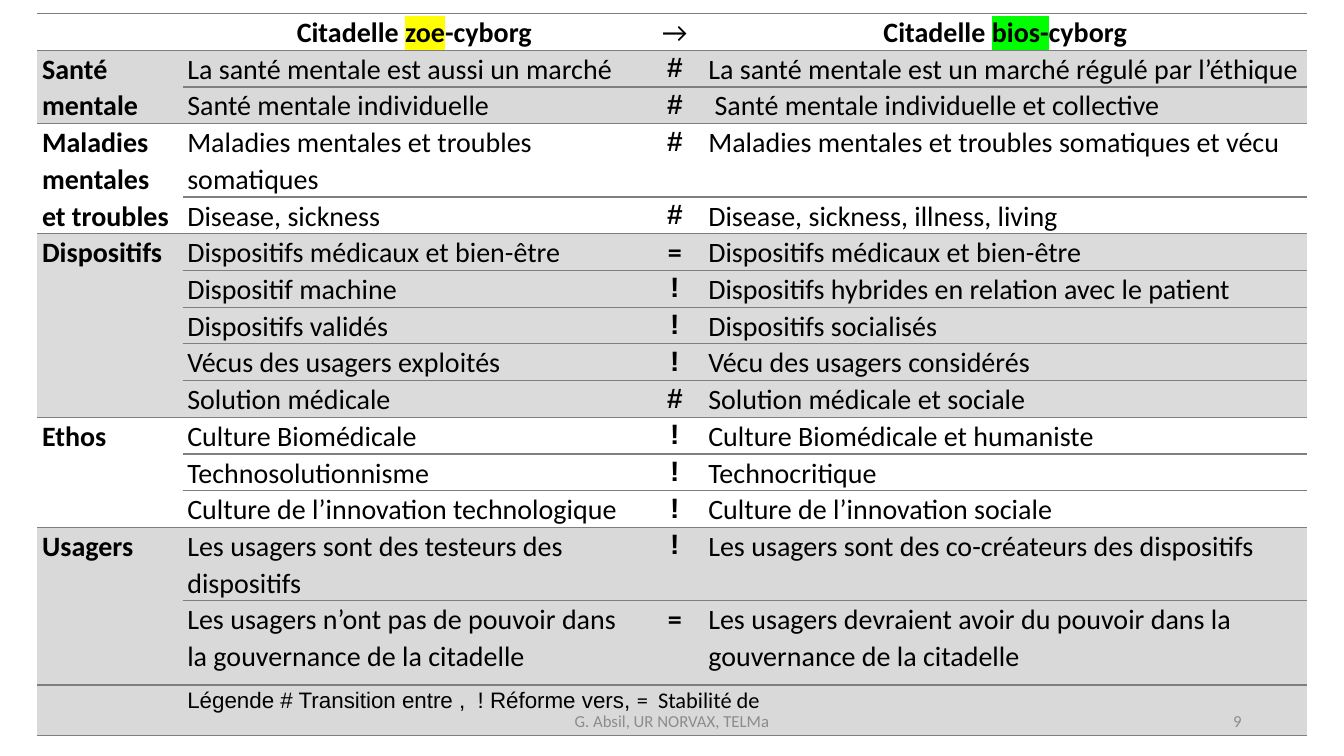
from dataclasses import dataclass

from lxml import etree
from pptx import Presentation
from pptx import util as u
from pptx.dml import color
from pptx.enum import text
from pptx.oxml import ns


@dataclass(frozen=True)
class Theme:
    ink: str = "000000"
    muted: str = "8C8C8C"
    rule: str = "7F7F7F"
    band: str = "D9D9D9"
    device_band: str = "DBDBDB"
    zoe: str = "FFFF00"
    bios: str = "00FF00"
    body_font: str = "Calibri"
    symbol_font: str = "Arial"
    body: int = 20
    legend: int = 16
    footer: int = 12


THEME = Theme()
LEFT = text.PP_ALIGN.LEFT
CENTER = text.PP_ALIGN.CENTER
RIGHT = text.PP_ALIGN.RIGHT

COLUMN_WIDTHS = [3.66, 11.68, 1.45, 15.2]
LINE_HEIGHT, TWO_LINES, LAST_ENTRY, LEGEND_HEIGHT = 0.92, 1.85, 2.12, 1.27

HEADINGS = [
    (1, [("Citadelle ", None), ("zoe", THEME.zoe), ("-cyborg", None)], True),
    (2, [("→", None)], False),
    (3, [("Citadelle ", None), ("bios-", THEME.bios), ("cyborg", None)], True),
]

THEMES_COMPARED = [
    ("Santé mentale", THEME.band, [
        ("La santé mentale est aussi un marché", "#",
         "La santé mentale est un marché régulé par l’éthique", LINE_HEIGHT),
        ("Santé mentale individuelle", "#",
         " Santé mentale individuelle et collective", LINE_HEIGHT),
    ]),
    ("Maladies mentales et troubles", None, [
        ("Maladies mentales et troubles somatiques", "#",
         "Maladies mentales et troubles somatiques et vécu", TWO_LINES),
        ("Disease, sickness", "#", "Disease, sickness, illness, living", LINE_HEIGHT),
    ]),
    ("Dispositifs", THEME.device_band, [
        ("Dispositifs médicaux et bien-être", "=",
         "Dispositifs médicaux et bien-être", LINE_HEIGHT),
        ("Dispositif machine", "!",
         "Dispositifs hybrides en relation avec le patient", LINE_HEIGHT),
        ("Dispositifs validés", "!", "Dispositifs socialisés", LINE_HEIGHT),
        ("Vécus des usagers exploités", "!", "Vécu des usagers considérés", LINE_HEIGHT),
        ("Solution médicale", "#", "Solution médicale et sociale", LINE_HEIGHT),
    ]),
    ("Ethos", None, [
        ("Culture Biomédicale", "!", "Culture Biomédicale et humaniste", LINE_HEIGHT),
        ("Technosolutionnisme", "!", "Technocritique", LINE_HEIGHT),
        ("Culture de l’innovation technologique", "!",
         "Culture de l’innovation sociale", LINE_HEIGHT),
    ]),
    ("Usagers", THEME.band, [
        ("Les usagers sont des testeurs des dispositifs", "!",
         "Les usagers sont des co-créateurs des dispositifs", TWO_LINES),
        ("Les usagers n’ont pas de pouvoir dans la gouvernance de la citadelle", "=",
         "Les usagers devraient avoir du pouvoir dans la gouvernance de la citadelle",
         LAST_ENTRY),
    ]),
]


def write(paragraph, content, size=THEME.body, font=THEME.body_font, ink=THEME.ink,
          bold=False, highlight=None, align=LEFT):
    paragraph.alignment = align
    run = paragraph.add_run()
    run.text = content
    run.font.size = u.Pt(size)
    run.font.bold = bold
    run.font.color.rgb = color.RGBColor.from_string(ink)
    if highlight:
        properties = run.font._element
        mark = etree.SubElement(properties, ns.qn("a:highlight"))
        etree.SubElement(mark, ns.qn("a:srgbClr"), val=highlight)
    run.font.name = font


class SlideBuilder:
    def __init__(self, presentation, theme):
        self.theme = theme
        self.slide = presentation.slides.add_slide(presentation.slide_layouts[6])

    def table(self, left, top, widths, heights):
        frame = self.slide.shapes.add_table(
            len(heights), len(widths), u.Cm(left), u.Cm(top),
            u.Cm(sum(widths)), u.Cm(sum(heights)))
        table = frame.table
        table.first_row = table.horz_banding = False
        for column, width in zip(table.columns, widths):
            column.width = u.Cm(width)
        for row, height in zip(table.rows, heights):
            row.height = u.Cm(height)
        for cell in table.iter_cells():
            cell.margin_left = cell.margin_right = u.Cm(0.12)
            cell.margin_top = cell.margin_bottom = 0
        return table

    def cell(self, cell, fill=None):
        properties = cell._tc.get_or_add_tcPr()
        for side in ("lnL", "lnR"):
            line = etree.SubElement(properties, ns.qn(f"a:{side}"), w="0")
            etree.SubElement(line, ns.qn("a:noFill"))
        for side in ("lnT", "lnB"):
            line = etree.SubElement(properties, ns.qn(f"a:{side}"), w=str(u.Pt(1)))
            solid = etree.SubElement(line, ns.qn("a:solidFill"))
            etree.SubElement(solid, ns.qn("a:srgbClr"), val=self.theme.rule)
        if fill:
            cell.fill.solid()
            cell.fill.fore_color.rgb = color.RGBColor.from_string(fill)
        else:
            cell.fill.background()
        paragraph = cell.text_frame.paragraphs[0]
        paragraph.line_spacing = 1.07
        paragraph.space_after = u.Pt(8)
        return paragraph

    def footer(self, content, left, width, align):
        box = self.slide.shapes.add_textbox(
            u.Cm(left), u.Cm(17.65), u.Cm(width), u.Cm(1.02))
        frame = box.text_frame
        frame.word_wrap = True
        frame.vertical_anchor = text.MSO_ANCHOR.MIDDLE
        write(frame.paragraphs[0], content, size=self.theme.footer,
              ink=self.theme.muted, align=align)


def fill_headings(builder, table):
    builder.cell(table.cell(0, 0))
    for column, pieces, bold in HEADINGS:
        paragraph = builder.cell(table.cell(0, column))
        for content, highlight in pieces:
            write(paragraph, content, bold=bold, highlight=highlight, align=CENTER)


def fill_comparison(builder, table):
    row = 1
    for name, fill, entries in THEMES_COMPARED:
        heading = table.cell(row, 0)
        heading.merge(table.cell(row + len(entries) - 1, 0))
        write(builder.cell(heading, fill), name, bold=True)
        for zoe, symbol, bios, _ in entries:
            font = THEME.body_font if symbol == "=" else THEME.symbol_font
            write(builder.cell(table.cell(row, 1), fill), zoe)
            write(builder.cell(table.cell(row, 2), fill), symbol,
                  font=font, bold=True, align=CENTER)
            write(builder.cell(table.cell(row, 3), fill), bios)
            row += 1
    return row


def fill_legend(builder, table, row):
    builder.cell(table.cell(row, 0), THEME.band)
    legend = table.cell(row, 1)
    legend.merge(table.cell(row, 3))
    paragraph = builder.cell(legend, THEME.band)
    write(paragraph, "Légende # Transition entre ,  ! Réforme vers, ",
          size=THEME.legend, font=THEME.symbol_font)
    write(paragraph, "=  Stabilité de", size=THEME.legend)


def main():
    presentation = Presentation()
    presentation.slide_width = u.Cm(33.87)
    presentation.slide_height = u.Cm(19.05)
    builder = SlideBuilder(presentation, THEME)
    entry_heights = [entry[-1] for _, _, entries in THEMES_COMPARED for entry in entries]
    table = builder.table(0.94, 0.34, COLUMN_WIDTHS,
                          [LINE_HEIGHT, *entry_heights, LEGEND_HEIGHT])
    fill_headings(builder, table)
    legend_row = fill_comparison(builder, table)
    fill_legend(builder, table, legend_row)
    builder.footer("G. Absil, UR NORVAX, TELMa", 11.22, 11.43, CENTER)
    builder.footer("9", 23.92, 7.62, RIGHT)
    presentation.save("out.pptx")


if __name__ == "__main__":
    main()
